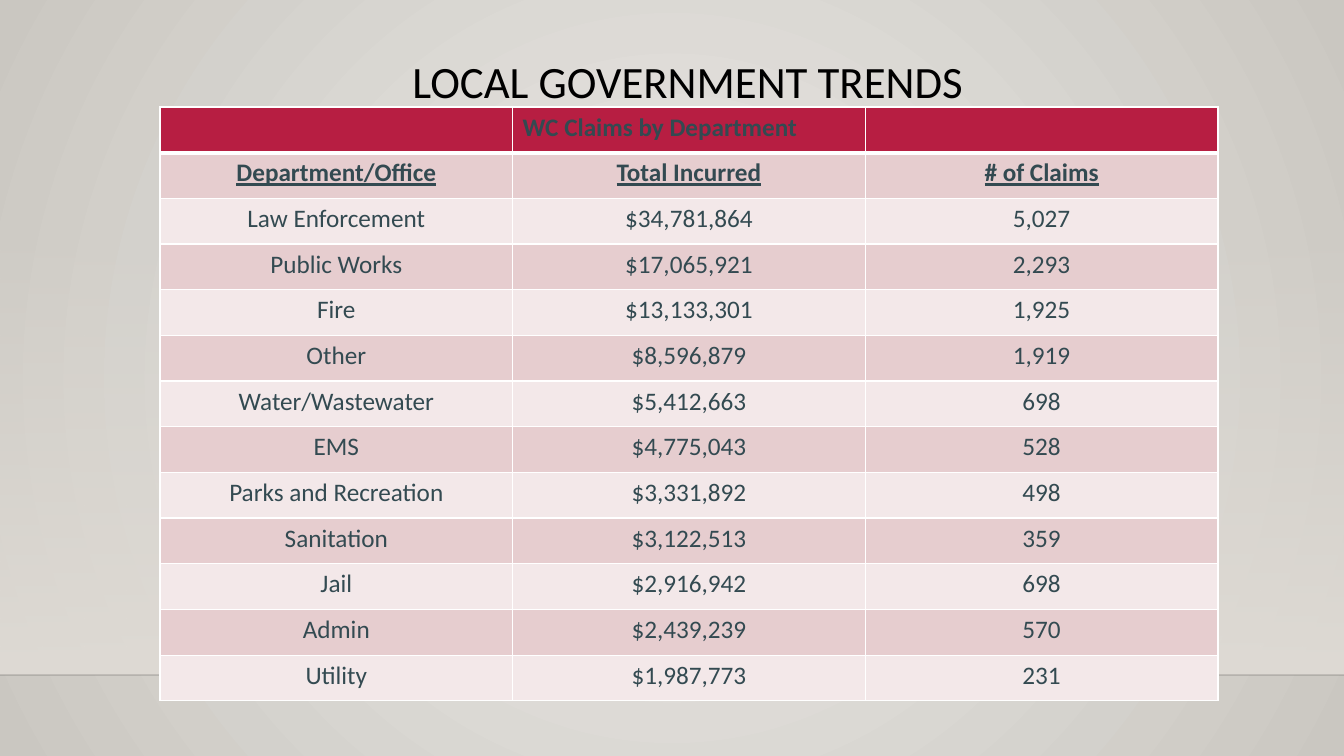
from pptx import Presentation, util as u
from pptx.dml.color import RGBColor
from pptx.enum import shapes, text
from pptx.oxml import parse_xml
from pptx.oxml.ns import nsdecls, qn

PX = 914400 / 100.8
WIDTH, HEIGHT, FLOOR = 1344, 756, 675

HEADINGS = ("Department/Office", "Total Incurred", "# of Claims")
CLAIMS = [
    ("Law Enforcement", "$34,781,864", "5,027"),
    ("Public Works", "$17,065,921", "2,293"),
    ("Fire", "$13,133,301", "1,925"),
    ("Other", "$8,596,879", "1,919"),
    ("Water/Wastewater", "$5,412,663", "698"),
    ("EMS", "$4,775,043", "528"),
    ("Parks and Recreation", "$3,331,892", "498"),
    ("Sanitation", "$3,122,513", "359"),
    ("Jail", "$2,916,942", "698"),
    ("Admin", "$2,439,239", "570"),
    ("Utility", "$1,987,773", "231"),
]


def px(*lengths):
    return [u.Emu(round(length * PX)) for length in lengths]


def color(value):
    return RGBColor.from_string(value)


def gradient(owner, fill, stops, direction):
    """Fill with stops of (position %, colour, opacity %) along a direction element."""
    fill.gradient()
    stop_xml = "".join(
        f'<a:gs pos="{position * 1000}"><a:srgbClr val="{value}">'
        f'<a:alpha val="{opacity * 1000}"/></a:srgbClr></a:gs>'
        for position, value, opacity in stops)
    old = next(owner.iter(qn("a:gradFill")))
    old.getparent().replace(old, parse_xml(
        f'<a:gradFill {nsdecls("a")} rotWithShape="1">'
        f"<a:gsLst>{stop_xml}</a:gsLst>{direction}</a:gradFill>"))


class TrendSlide:
    FONT = "Calibri"
    INK = "334A51"
    RED = "B71E42"
    BANDS = ("E6CDCF", "F3E8E9")
    RULE = "FFFFFF"

    def __init__(self, deck):
        self.slide = deck.slides.add_slide(deck.slide_layouts[6])

    def backdrop(self):
        gradient(self.slide.element, self.slide.background.fill,
                 [(0, "ECEAE7", 100), (100, "CAC7C1", 100)],
                 '<a:path path="circle">'
                 '<a:fillToRect l="50000" t="50000" r="50000" b="50000"/></a:path>')

    def wall(self, left, top, width, height):
        wall = self.slide.shapes.add_shape(
            shapes.MSO_SHAPE.RECTANGLE, *px(left, top, width, height))
        wall.shadow.inherit = False
        wall.line.fill.background()
        gradient(wall.element, wall.fill, [(0, "DFDBD5", 0), (100, "DFDBD5", 100)],
                 '<a:lin ang="5400000" scaled="0"/>')

    def floor_line(self, y):
        edge = self.slide.shapes.add_connector(
            shapes.MSO_CONNECTOR.STRAIGHT, *px(0, y, WIDTH, y))
        edge.line.width = u.Pt(1)
        edge.line.color.rgb = color("000001")
        shade = next(edge.element.spPr.iter(qn("a:srgbClr")))
        shade.append(parse_xml(f'<a:alpha {nsdecls("a")} val="20000"/>'))
        edge.element.spPr.append(parse_xml(f'<a:effectLst {nsdecls("a")}/>'))

    def label(self, paragraph, words, size, ink, bold=False, underline=False, centered=True):
        paragraph.text = words
        if centered:
            paragraph.alignment = text.PP_ALIGN.CENTER
        font = paragraph.font
        font.name, font.size, font.bold = self.FONT, u.Pt(size), bold
        font.underline = underline
        font.color.rgb = color(ink)

    def title(self, words, left, top, width, height):
        frame = self.slide.shapes.add_textbox(*px(left, top, width, height)).text_frame
        frame.word_wrap = True
        frame.vertical_anchor = text.MSO_ANCHOR.TOP
        heading = frame.paragraphs[0]
        heading.line_spacing = 0.9
        self.label(heading, words, 32, "000000")

    def borders(self, cell, top=1, bottom=1):
        properties = cell._tc.get_or_add_tcPr()
        widths = {"lnL": 1, "lnR": 1, "lnT": top, "lnB": bottom}
        for place, (side, points) in enumerate(widths.items()):
            properties.insert(place, parse_xml(
                f'<a:{side} {nsdecls("a")} w="{u.Pt(points)}"><a:solidFill>'
                f'<a:srgbClr val="{self.RULE}"/></a:solidFill></a:{side}>'))

    def claims_table(self, caption, left, top, width, height):
        rows = [("", caption, ""), HEADINGS, *CLAIMS]
        table = self.slide.shapes.add_table(
            len(rows), len(HEADINGS), *px(left, top, width, height)).table
        for r, row in enumerate(rows):
            for c, words in enumerate(row):
                cell = table.cell(r, c)
                cell.fill.solid()
                cell.fill.fore_color.rgb = color(self.BANDS[(r - 1) % 2] if r else self.RED)
                self.borders(cell, top=3 if r == 1 else 1, bottom=3 if r == 0 else 1)
                self.label(cell.text_frame.paragraphs[0], words, 18, self.INK,
                           bold=r < 2, underline=r == 1, centered=r > 0)


def main():
    deck = Presentation()
    deck.slide_width, deck.slide_height = px(WIDTH, HEIGHT)
    trends = TrendSlide(deck)
    trends.backdrop()
    trends.wall(0, 223, WIDTH, FLOOR - 223)
    trends.floor_line(FLOOR)
    trends.title("LOCAL GOVERNMENT TRENDS ", 164, 55, 1058, 116)
    trends.claims_table("WC Claims by Department", 160, 107, 1058, 594)
    deck.save("out.pptx")


if __name__ == "__main__":
    main()
